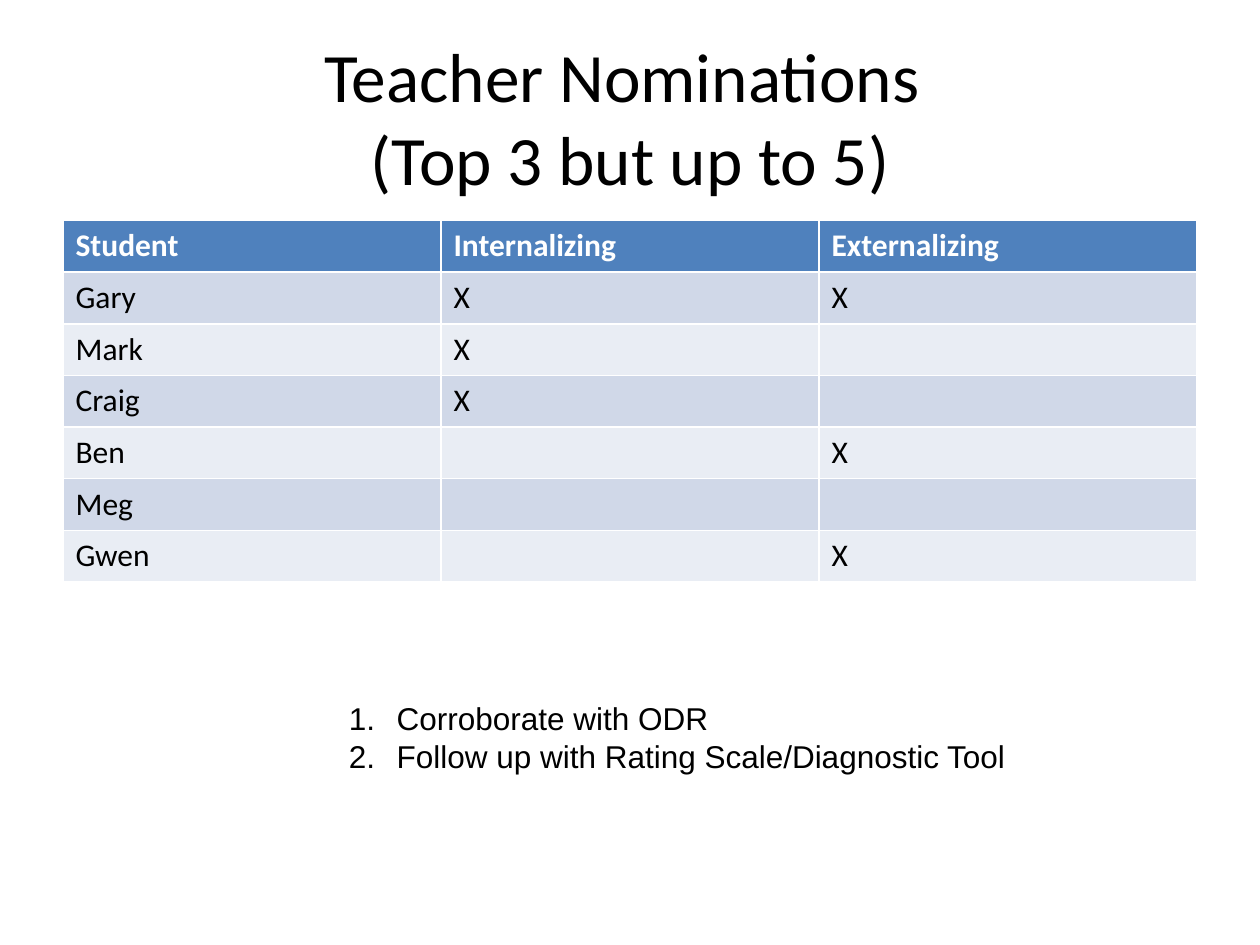
"""Build the teacher nominations slide."""
import lxml.etree
import pptx
import pptx.dml.color
import pptx.enum.text
import pptx.oxml.ns
import pptx.util

WIDTH, HEIGHT = 10, 7.5
MARGIN = 0.05 * WIDTH
CONTENT = WIDTH - 2 * MARGIN
ROW = 0.41
HEADER, BANDS = "4F81BD", ("D0D8E8", "E9EDF4")
NOMINATIONS = [
    ("Student", "Internalizing", "Externalizing"),
    ("Gary", "X", "X"),
    ("Mark", "X", ""),
    ("Craig", "X", ""),
    ("Ben", "", "X"),
    ("Meg", "", ""),
    ("Gwen", "", "X"),
]
STEPS = ["Corroborate with ODR", "Follow up with Rating Scale/Diagnostic Tool"]


def color(value):
    """Return the colour for a hex string."""
    return pptx.dml.color.RGBColor.from_string(value)


def box(*lengths):
    """Return left, top, width and height given in inches."""
    return [pptx.util.Inches(length) for length in lengths]


def add_run(p, text, size, font="Calibri", fill="000000", bold=False):
    """Add one formatted run to a paragraph."""
    r = p.add_run()
    r.text = text
    r.font.size = pptx.util.Pt(size)
    r.font.name = font
    r.font.bold = bold
    r.font.color.rgb = color(fill)


def add_title(slide, lines):
    """Add the centred title with a line break between its lines."""
    tf = slide.shapes.add_textbox(*box(MARGIN, 0.04 * HEIGHT, CONTENT, HEIGHT / 6)).text_frame
    tf.word_wrap = True
    tf.vertical_anchor = pptx.enum.text.MSO_ANCHOR.MIDDLE
    p = tf.paragraphs[0]
    p.alignment = pptx.enum.text.PP_ALIGN.CENTER
    for i, line in enumerate(lines):
        if i:
            p.add_line_break()
        add_run(p, line, 39.6)


def add_grid(slide, rows):
    """Add the banded table with a header row and equal columns."""
    frame = box(MARGIN, 1.75, CONTENT, ROW * len(rows))
    table = slide.shapes.add_table(len(rows), len(rows[0]), *frame).table
    for i, row in enumerate(rows):
        for j, text in enumerate(row):
            cell = table.cell(i, j)
            cell.fill.solid()
            cell.fill.fore_color.rgb = color(BANDS[(i - 1) % 2] if i else HEADER)
            if text:
                p = cell.text_frame.paragraphs[0]
                add_run(p, text, 18, fill="000000" if i else "FFFFFF", bold=i == 0)


def add_numbered_list(slide, items):
    """Add an automatically numbered list."""
    tf = slide.shapes.add_textbox(*box(2.67, 5.5, 5.46, 0.71)).text_frame
    tf.word_wrap = False
    tf.auto_size = pptx.enum.text.MSO_AUTO_SIZE.SHAPE_TO_FIT_TEXT
    indent = pptx.util.Inches(0.38)
    for i, item in enumerate(items):
        p = tf.add_paragraph() if i else tf.paragraphs[0]
        pPr = p._p.get_or_add_pPr()
        pPr.set("marL", str(indent))
        pPr.set("indent", str(-indent))
        bullet = lxml.etree.SubElement(pPr, pptx.oxml.ns.qn("a:buAutoNum"))
        bullet.set("type", "arabicPeriod")
        add_run(p, item, 18, font="Arial")


def main():
    """Build and save the slide."""
    prs = pptx.Presentation()
    prs.slide_width, prs.slide_height = box(WIDTH, HEIGHT)
    slide = prs.slides.add_slide(prs.slide_layouts[6])
    add_title(slide, ["Teacher Nominations ", "(Top 3 but up to 5)"])
    add_grid(slide, NOMINATIONS)
    add_numbered_list(slide, STEPS)
    prs.save("out.pptx")


if __name__ == "__main__":
    main()
